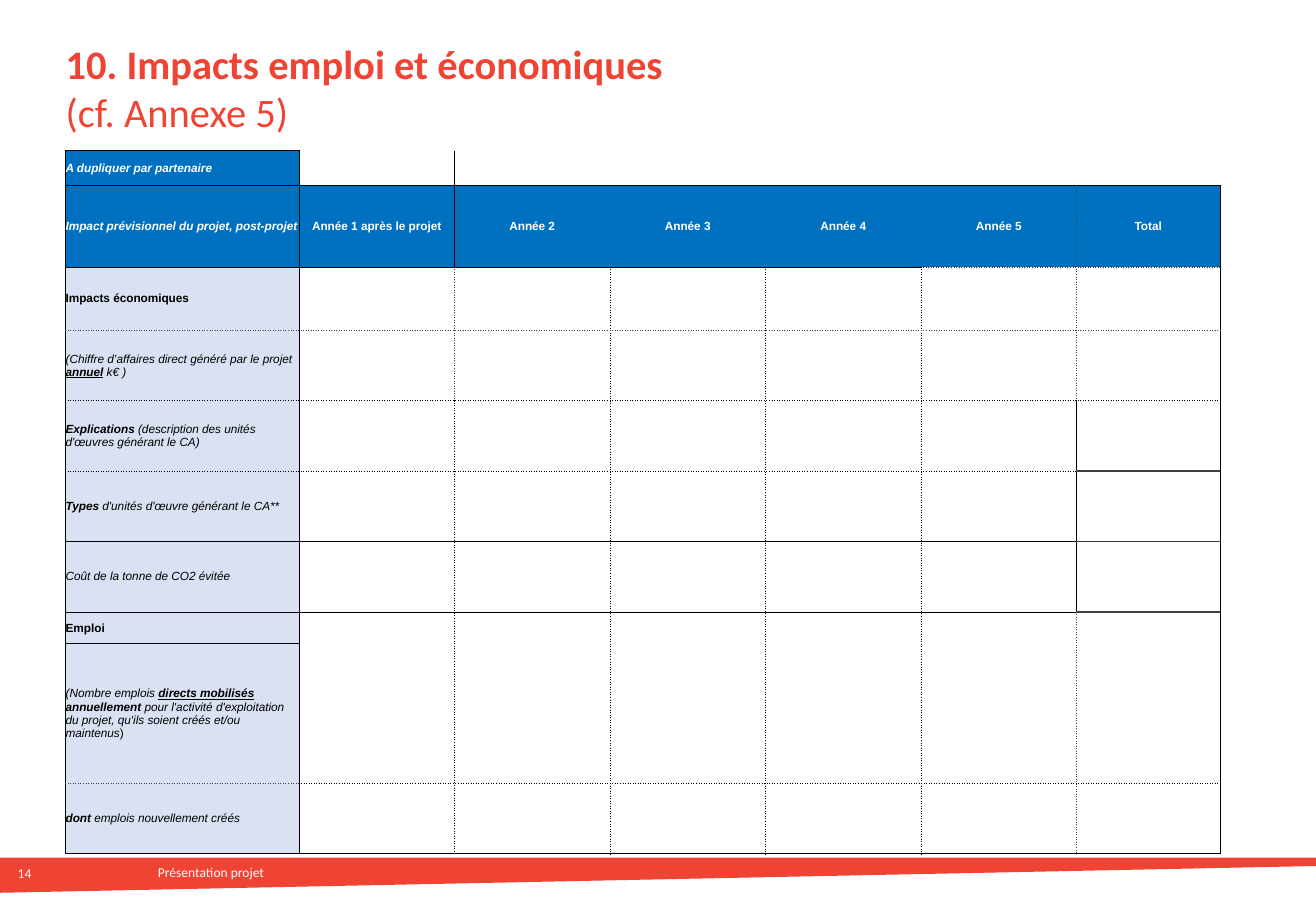
from lxml.etree import SubElement
from pptx import Presentation
from pptx.dml.color import RGBColor
from pptx.enum.text import MSO_ANCHOR, MSO_AUTO_SIZE, PP_ALIGN
from pptx.oxml.ns import qn
from pptx.util import Inches, Pt

MIDDLE = MSO_ANCHOR.MIDDLE
TOP = MSO_ANCHOR.TOP
LEFT = PP_ALIGN.LEFT
CENTER = PP_ALIGN.CENTER
RIGHT = PP_ALIGN.RIGHT
NO_AUTOFIT = MSO_AUTO_SIZE.NONE

RED, BLUE, PALE, WHITE, BLACK = "EF4333", "0070C0", "D9E1F2", "FFFFFF", "000000"
GREY = "404040"
PLAIN_TABLE_STYLE = "{2D5ABB26-0587-4C30-8999-92F81FD0307C}"

# Border codes: colour, width in points, dash
BORDERS = {
    "S": (BLACK, 0.5, "solid"),
    "D": (BLACK, 0.5, "dot"),
    "G": (GREY, 1, "dot"),
    "Y": (GREY, 1, "sysDot"),
    "H": (GREY, 1, "solid"),
}
# One code per column, for each horizontal rule from top to bottom
HORIZONTAL_RULES = [
    "S......", "SSSSSSS", "SSSSSYY", "GGGGGGG", "DDDDDDD", "DDDDDDH",
    "SSSSSSH", "SSSSSSH", ".DDDDDD", "GDDDDDD", "SSSSSSS",
]
# One code per column edge, for each row
VERTICAL_RULES = (["SS......", "SS....GS"] + ["SSGDDDGS"] * 2
                  + ["SSDDDDSS"] * 3 + ["SSDDDDGS"] * 3)

COLUMN_WIDTHS = [1.92] + [1.28] * 5 + [1.18, 0.59]
ROW_HEIGHTS = [0.29, 0.67, 0.52] + [0.58] * 4 + [0.26, 1.15, 0.58]
HEADINGS = ["Année 1 après le projet", "Année 2", "Année 3", "Année 4", "Année 5", "Total"]
# Runs of each row label: text, then b(old), i(talic), u(nderlined)
ROW_LABELS = [
    [("A dupliquer par partenaire", "bi")],
    [("Impact prévisionnel du projet, post-projet", "bi")],
    [("Impacts économiques", "b")],
    [("(Chiffre d’affaires direct généré par le projet ", "i"), ("annuel", "biu"),
     (" ", "bi"), ("k€ )", "i")],
    [("Explications ", "bi"), ("(description des unités d'œuvres générant le CA)", "i")],
    [("Types ", "bi"), ("d'unités d'œuvre générant le CA**", "i")],
    [("Coût de la tonne de CO2 évitée", "i")],
    [("Emploi", "b")],
    [("(Nombre emplois ", "i"), ("directs mobilisés", "biu"), (" annuellement ", "bi"),
     ("pour l'activité d'exploitation du projet, qu'ils soient créés et/ou maintenus", "i"),
     (")", "")],
    [("dont ", "bi"), ("emplois nouvellement créés", "i")],
]
EMPLOI_ROW = 7


def colour(value):
    return RGBColor.from_string(value)


class SlideBuilder:
    heading_font = "Calibri"
    table_font = "Arial"
    table_size = 7

    def __init__(self, presentation):
        self.slide = presentation.slides.add_slide(presentation.slide_layouts[5])

    def style(self, run, font, size, text_colour, marks=""):
        run.font.name = font
        run.font.size = Pt(size)
        run.font.color.rgb = colour(text_colour)
        run.font.bold = "b" in marks
        run.font.italic = "i" in marks
        run.font.underline = "u" in marks

    def frame(self, shape, anchor, inset=0.0):
        text_frame = shape.text_frame
        text_frame.margin_left = text_frame.margin_right = 0
        text_frame.margin_top = text_frame.margin_bottom = Inches(inset)
        text_frame.vertical_anchor = anchor
        text_frame.auto_size = NO_AUTOFIT
        text_frame.word_wrap = True
        return text_frame

    def title(self, heading, reference, left, top, width, height):
        shape = self.slide.shapes.title
        shape.left, shape.top = Inches(left), Inches(top)
        shape.width, shape.height = Inches(width), Inches(height)
        text_frame = self.frame(shape, MIDDLE, 0.05)
        text_frame.text = heading + "\v" + reference
        paragraph = text_frame.paragraphs[0]
        paragraph.alignment = LEFT
        for run, marks in zip(paragraph.runs, ("b", "")):
            self.style(run, self.heading_font, 24, RED, marks)
        for line_break in paragraph._p.findall(qn("a:br")):
            SubElement(line_break, qn("a:rPr"), sz="2400")

    def band(self, points):
        start, *others = [(Inches(x), Inches(y)) for x, y in points]
        builder = self.slide.shapes.build_freeform(*start)
        builder.add_line_segments(others, close=True)
        shape = builder.convert_to_shape()
        shape.shadow.inherit = False
        shape.fill.solid()
        shape.fill.fore_color.rgb = colour(RED)
        shape.line.fill.background()

    def footer_text(self, text, left, top, width, anchor, alignment):
        box = self.slide.shapes.add_textbox(
            Inches(left), Inches(top), Inches(width), Inches(0.13))
        text_frame = self.frame(box, anchor)
        text_frame.text = text
        paragraph = text_frame.paragraphs[0]
        paragraph.alignment = alignment
        self.style(paragraph.runs[0], self.heading_font, 8, WHITE)

    def table(self, left, top, widths, heights):
        graphic = self.slide.shapes.add_table(
            len(heights), len(widths), Inches(left), Inches(top),
            Inches(sum(widths)), Inches(sum(heights)))
        table = graphic.table
        table.first_row = table.horz_banding = False
        table._tbl.tblPr.find(qn("a:tableStyleId")).text = PLAIN_TABLE_STYLE
        for column, width in zip(table.columns, widths):
            column.width = Inches(width)
        for row, height in zip(table.rows, heights):
            row.height = Inches(height)
        return table

    def cell(self, cell, runs, text_colour, fill, alignment):
        cell.margin_left = cell.margin_right = cell.margin_top = cell.margin_bottom = 0
        cell.vertical_anchor = MIDDLE
        if fill:
            cell.fill.solid()
            cell.fill.fore_color.rgb = colour(fill)
        paragraph = cell.text_frame.paragraphs[0]
        paragraph.alignment = alignment
        for text, marks in runs:
            run = paragraph.add_run()
            run.text = text
            self.style(run, self.table_font, self.table_size, text_colour, marks)
        if not runs:
            SubElement(paragraph._p, qn("a:endParaRPr"), sz=str(self.table_size * 100))

    def borders(self, cell, codes):
        properties = cell._tc.get_or_add_tcPr()
        for side, code in zip("LRTB", codes):
            if code not in BORDERS:
                continue
            line_colour, width, dash = BORDERS[code]
            line = SubElement(properties, qn("a:ln" + side), w=str(Pt(width)))
            fill = SubElement(line, qn("a:solidFill"))
            SubElement(fill, qn("a:srgbClr"), val=line_colour)
            SubElement(line, qn("a:prstDash"), val=dash)


def main():
    presentation = Presentation()
    presentation.slide_width = Inches(10.83)
    presentation.slide_height = Inches(7.5)
    builder = SlideBuilder(presentation)

    # Footer
    builder.band([(0, 7.06), (10.83, 7.06), (10.83, 7.13), (0, 7.35)])
    builder.footer_text("Présentation projet", 1.3, 7.11, 1.2, TOP, LEFT)
    builder.footer_text("14", 0.06, 7.12, 0.2, MIDDLE, RIGHT)

    # Title
    builder.title("10. Impacts emploi et économiques", "(cf. Annexe 5)", 0.54, 0.3, 9.75, 0.84)

    # Impact table
    table = builder.table(0.54, 1.24, COLUMN_WIDTHS, ROW_HEIGHTS)
    last_column = len(COLUMN_WIDTHS) - 1
    for row, label in enumerate(ROW_LABELS):
        for column in range(last_column + 1):
            cell = table.cell(row, column)
            runs, fill, alignment = [], None, LEFT
            if column < last_column:
                edges = VERTICAL_RULES[row][column:column + 2]
                builder.borders(cell, edges + HORIZONTAL_RULES[row][column]
                                + HORIZONTAL_RULES[row + 1][column])
                if column == 0:
                    runs, fill = label, BLUE if row < 2 else PALE
                elif row == 1:
                    runs, fill, alignment = [(HEADINGS[column - 1], "b")], BLUE, CENTER
                elif row > 1:
                    fill = WHITE
            builder.cell(cell, runs, WHITE if row < 2 else BLACK, fill, alignment)
    for column in range(1, last_column):
        table.cell(EMPLOI_ROW, column).merge(table.cell(EMPLOI_ROW + 1, column))

    presentation.save("out.pptx")


if __name__ == "__main__":
    main()
